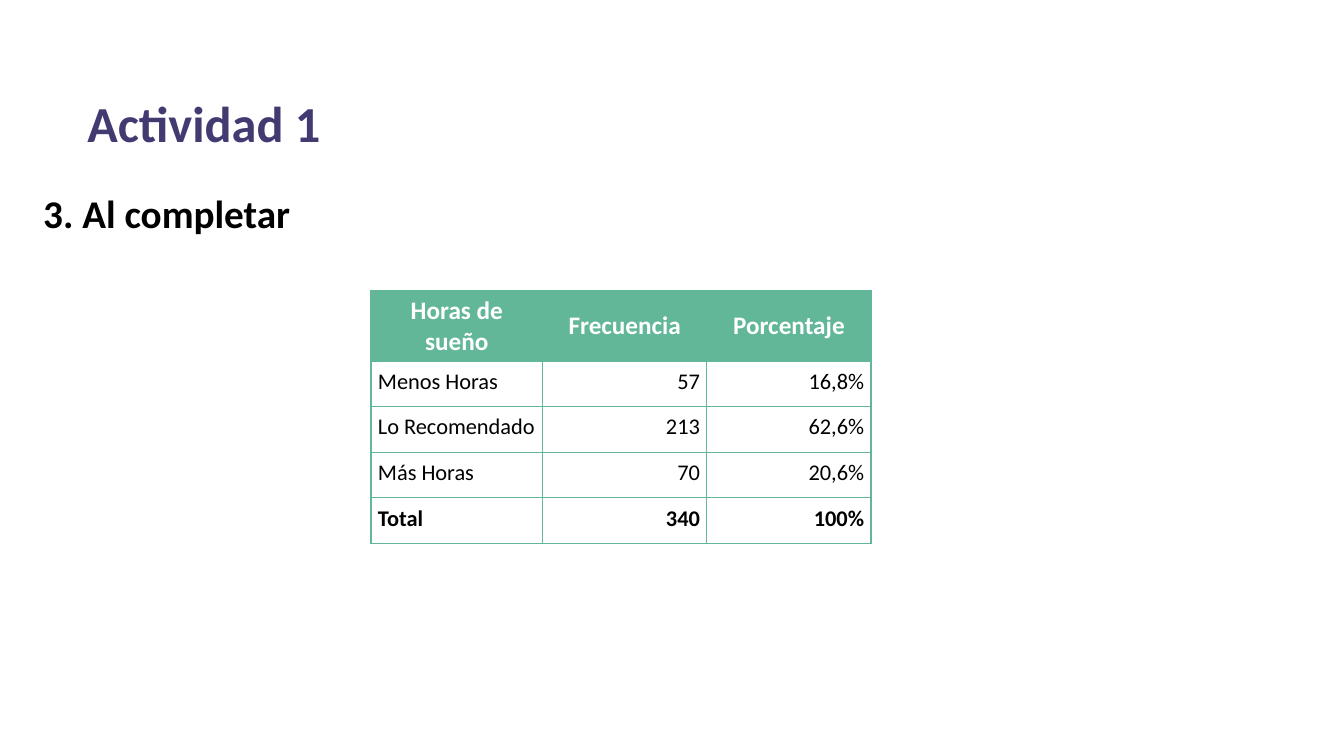
import pptx
import pptx.dml.color
import pptx.enum.text
import pptx.util
from lxml import etree

Pt = pptx.util.Pt
ALIGN = pptx.enum.text.PP_ALIGN
ANCHOR = pptx.enum.text.MSO_ANCHOR

# Content
TITLE = "Actividad 1"
SUBTITLE = "3. Al completar"
HOURS = [
    ("Horas de sueño", "Frecuencia", "Porcentaje"),
    ("Menos Horas", "57", "16,8%"),
    ("Lo Recomendado", "213", "62,6%"),
    ("Más Horas", "70", "20,6%"),
    ("Total", "340", "100%"),
]
COLORS = {"title": "423B71", "text": "000000", "header": "FFFFFF", "green": "63B799"}
FONT = "Calibri"
COL_WIDTHS = [122.6, 117.3, 117.3]
ROW_HEIGHTS = [49] + [32.6] * (len(HOURS) - 1)


def rgb(name):
    return pptx.dml.color.RGBColor.from_string(COLORS[name])


def write(tf, text, *, size, color="text", bold=False, align=ALIGN.LEFT):
    p = tf.paragraphs[0]
    p.alignment = align
    r = p.add_run()
    r.text = text
    r.font.name = FONT
    r.font.size = Pt(size)
    r.font.bold = bold
    r.font.color.rgb = rgb(color)


def add_text(s, text, left, top, width, height, **fmt):
    tf = s.shapes.add_textbox(Pt(left), Pt(top), Pt(width), Pt(height)).text_frame
    tf.word_wrap = True
    write(tf, text, **fmt)


def add_borders(cell, color, width):
    tc_pr = cell._tc.get_or_add_tcPr()
    ns = tc_pr.nsmap["a"]
    for i, side in enumerate(("lnL", "lnR", "lnT", "lnB")):
        ln = etree.Element(f"{{{ns}}}{side}", w=str(Pt(width)))
        fill = etree.SubElement(ln, f"{{{ns}}}solidFill")
        etree.SubElement(fill, f"{{{ns}}}srgbClr", val=COLORS[color])
        tc_pr.insert(i, ln)


def add_hours_table(s, left, top):
    table = s.shapes.add_table(
        len(HOURS), len(COL_WIDTHS), Pt(left), Pt(top),
        Pt(sum(COL_WIDTHS)), Pt(sum(ROW_HEIGHTS))).table
    table.first_row = table.horz_banding = False
    for col, width in zip(table.columns, COL_WIDTHS):
        col.width = Pt(width)
    for row, height in zip(table.rows, ROW_HEIGHTS):
        row.height = Pt(height)

    for i, values in enumerate(HOURS):
        for j, value in enumerate(values):
            cell = table.cell(i, j)
            if i == 0:
                cell.fill.solid()
                cell.fill.fore_color.rgb = rgb("green")
                cell.vertical_anchor = ANCHOR.MIDDLE
                write(cell.text_frame, value, size=18, color="header",
                      bold=True, align=ALIGN.CENTER)
            else:
                cell.fill.background()
                cell.margin_left = cell.margin_right = Pt(5)
                cell.margin_top = cell.margin_bottom = Pt(5)
                write(cell.text_frame, value, size=16, bold=i == len(HOURS) - 1,
                      align=ALIGN.RIGHT if j else ALIGN.LEFT)
            add_borders(cell, "green", 1)


def main():
    prs = pptx.Presentation()
    prs.slide_width, prs.slide_height = Pt(960), Pt(540)
    s = prs.slides.add_slide(prs.slide_layouts[6])

    # Headings
    add_text(s, TITLE, 55.4, 61.9, 643, 51, size=36, color="title", bold=True)
    add_text(s, SUBTITLE, 23.8, 131.8, 570, 41, size=28, bold=True,
             align=ALIGN.JUSTIFY)

    # Sleep hours table
    add_hours_table(s, 265, 207.4)

    prs.save("out.pptx")


if __name__ == "__main__":
    main()
